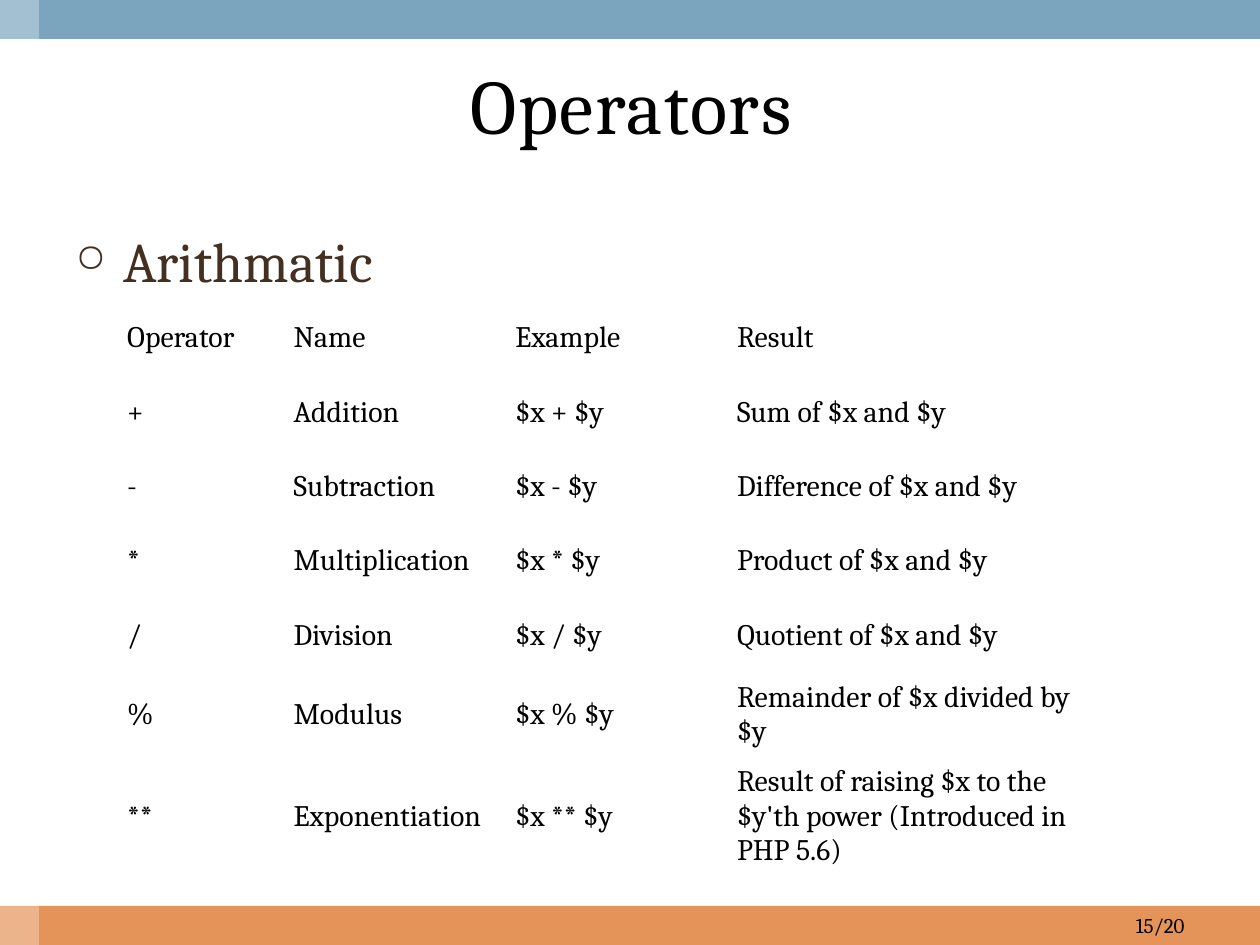
from lxml.etree import SubElement
from pptx import Presentation
from pptx.dml.color import RGBColor
from pptx.enum.shapes import MSO_SHAPE
from pptx.enum.text import MSO_ANCHOR, PP_ALIGN
from pptx.oxml.ns import qn
from pptx.util import Inches, Pt

BLACK = RGBColor(0x00, 0x00, 0x00)
WHITE = RGBColor(0xFF, 0xFF, 0xFF)
BROWN = RGBColor(0x43, 0x30, 0x21)
BLUE = RGBColor(0x7B, 0xA5, 0xBE)
ORANGE = RGBColor(0xE4, 0x94, 0x58)
FONT = "Cambria"
WIDTH, HEIGHT, BAND = 10, 7.5, 0.31

presentation = Presentation()
presentation.slide_width = Inches(WIDTH)
presentation.slide_height = Inches(HEIGHT)
slide = presentation.slides.add_slide(presentation.slide_layouts[6])


def style(paragraph, size, color=BLACK):
    paragraph.font.name = FONT
    paragraph.font.size = Pt(size)
    paragraph.font.color.rgb = color


def add_text(text, box, size, color=BLACK, align=PP_ALIGN.LEFT, anchor=MSO_ANCHOR.MIDDLE):
    frame = slide.shapes.add_textbox(*map(Inches, box)).text_frame
    frame.word_wrap = True
    frame.vertical_anchor = anchor
    paragraph = frame.paragraphs[0]
    paragraph.text = text
    paragraph.alignment = align
    style(paragraph, size, color)
    return paragraph


# Bottom band, top band and the pale strip down the left edge
for box, color in (
    ((0, HEIGHT - BAND, WIDTH, BAND), ORANGE),
    ((0, 0, WIDTH, BAND), BLUE),
    ((0, 0, BAND, HEIGHT), WHITE),
):
    band = slide.shapes.add_shape(MSO_SHAPE.RECTANGLE, *map(Inches, box))
    band.shadow.inherit = False
    band.fill.solid()
    band.fill.fore_color.rgb = color
    band.line.fill.background()
strip_color = band._element.spPr.find(qn("a:solidFill"))[0]
SubElement(strip_color, qn("a:alpha"), val="30000")

# Bulleted heading
heading = add_text("Arithmatic", (0.5, 1.75, 9, 0.64), 32, BROWN, anchor=MSO_ANCHOR.TOP)
heading.space_before = Pt(32 * 0.2)
properties = heading._p.get_or_add_pPr()
properties.set("marL", str(Inches(0.38)))
properties.set("indent", str(-Inches(0.38)))
SubElement(properties, qn("a:buSzPct"), val="70000")
SubElement(properties, qn("a:buChar"), char="○")

# Page number and title
add_text("15/20", (7.17, HEIGHT - BAND, 2.33, BAND), 12, align=PP_ALIGN.RIGHT)
title = add_text("Operators", (0.33, BAND, 9.36, 1.03), 44, align=PP_ALIGN.CENTER)
title.runs[0].font._element.set("spc", "100")

# Operator table
rows = [
    ("Operator", "Name", "Example", "Result"),
    ("+", "Addition", "$x + $y", "Sum of $x and $y"),
    ("-", "Subtraction", "$x - $y", "Difference of $x and $y"),
    ("*", "Multiplication", "$x * $y", "Product of $x and $y"),
    ("/", "Division", "$x / $y", "Quotient of $x and $y"),
    ("%", "Modulus", "$x % $y", "Remainder of $x divided by $y"),
    ("**", "Exponentiation", "$x ** $y",
     "Result of raising $x to the $y'th power (Introduced in PHP 5.6)"),
]
column_widths = [1.32, 1.76, 1.76, 3.07]
row_heights = [0.59] * 6 + [0.84]
table = slide.shapes.add_table(
    len(rows), len(column_widths), Inches(0.91), Inches(2.39),
    Inches(sum(column_widths)), Inches(sum(row_heights)),
).table
table.first_row = False
table.horz_banding = False
for column, width in zip(table.columns, column_widths):
    column.width = Inches(width)
for row, height, texts in zip(table.rows, row_heights, rows):
    row.height = Inches(height)
    for cell, text in zip(row.cells, texts):
        cell.fill.background()
        cell.vertical_anchor = MSO_ANCHOR.MIDDLE
        cell.text = text
        style(cell.text_frame.paragraphs[0], 17)

presentation.save("out.pptx")
